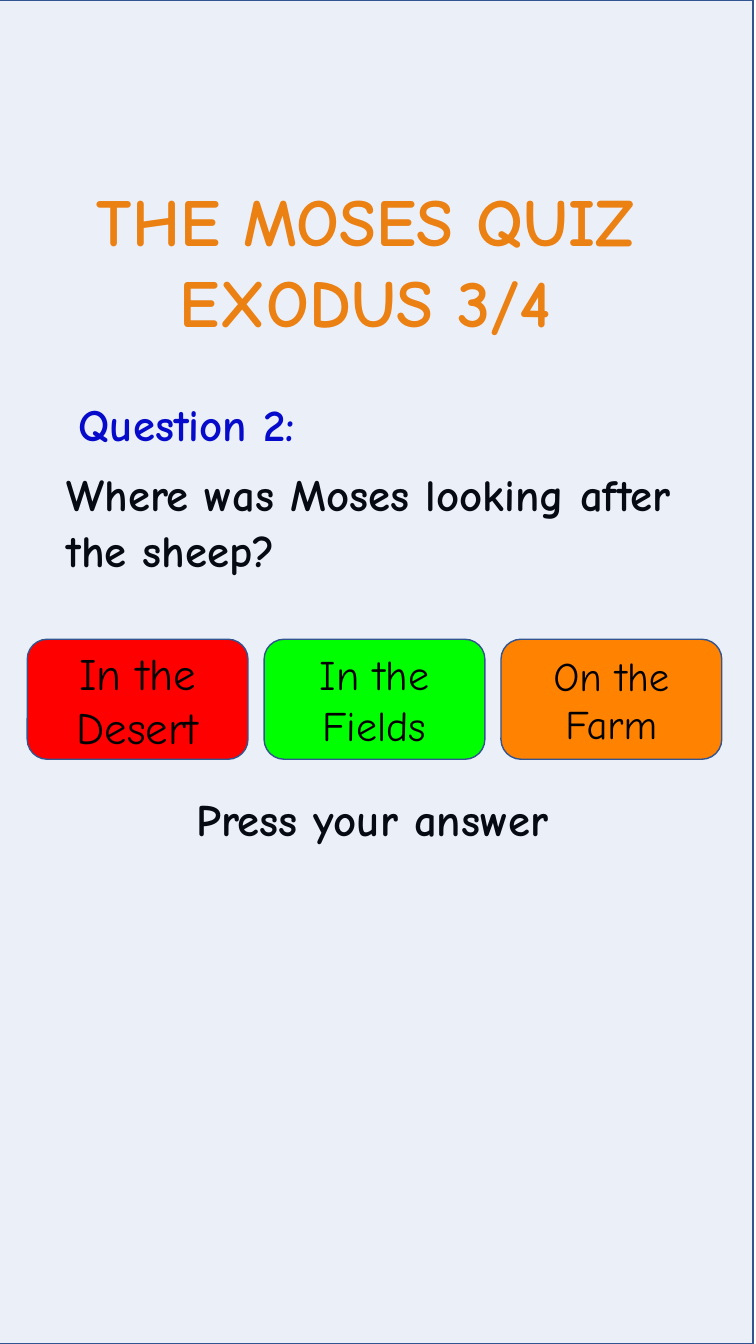
import pptx
import pptx.util
import pptx.dml.color
import pptx.enum.shapes
import pptx.enum.text
import pptx.oxml
import pptx.oxml.ns

Inches, Pt = pptx.util.Inches, pptx.util.Pt
RGB = pptx.dml.color.RGBColor
SHAPE = pptx.enum.shapes.MSO_SHAPE
ALIGN = pptx.enum.text.PP_ALIGN
ANCHOR = pptx.enum.text.MSO_ANCHOR
FIT = pptx.enum.text.MSO_AUTO_SIZE

ORANGE = RGB(0xFF, 0x82, 0x00)
BLUE = RGB(0x00, 0x00, 0xCC)
BLACK = RGB(0x00, 0x00, 0x00)
RED = RGB(0xFF, 0x00, 0x00)
GREEN = RGB(0x00, 0xFF, 0x00)
TINT = RGB(0x44, 0x72, 0xC4)
EDGE = RGB(0x32, 0x54, 0x91)

WIDTH, HEIGHT = 7.5, 13.33
FONT = "Comic Neue"
TITLE = ["THE MOSES QUIZ ", "EXODUS 3/4 "]
LABEL = ["Question 2:"]
QUERY = ["Where was Moses looking after the sheep?"]
PROMPT = ["Press your answer"]
ANSWERS = [
    ("In the Desert", RED, 32),
    ("In the Fields", GREEN, 30),
    ("On the Farm", ORANGE, 29),
]
LEFT, TOP, STEP = 0.27, 6.34, 2.35
WIDE, TALL = 2.19, 1.19


def assign(item, values):
    for name, value in values.items():
        setattr(item, name, value)


def place(shape, box):
    names = ("left", "top", "width", "height")
    assign(shape, dict(zip(names, map(Inches, box))))


def write(shape, lines, size, color, bold=True, wrap=True,
          anchor=ANCHOR.TOP, **para):
    frame = shape.text_frame
    assign(frame, {"text": "\n".join(lines), "word_wrap": wrap,
                   "auto_size": FIT.NONE, "vertical_anchor": anchor})
    for item in frame.paragraphs:
        assign(item, para)
        for run in item.runs:
            assign(run.font, {"name": FONT, "size": Pt(size), "bold": bold})
            run.font.color.rgb = color


def block(slide, kind, box, color):
    shape = slide.shapes.add_shape(kind, *map(Inches, box))
    shape.shadow.inherit = False
    shape.fill.solid()
    shape.fill.fore_color.rgb = color
    shape.line.color.rgb = EDGE
    shape.line.width = Pt(1)
    return shape


def main():
    deck = pptx.Presentation()
    assign(deck, {"slide_width": Inches(WIDTH), "slide_height": Inches(HEIGHT)})
    slide = deck.slides.add_slide(deck.slide_layouts[0])

    title = slide.shapes.title
    place(title, (0.3, 1.73, 6.89, 1.72))
    write(title, TITLE, 48, ORANGE, wrap=False, alignment=ALIGN.CENTER)

    query = slide.placeholders[1]
    place(query, (0.56, 4.56, 6.36, 1.46))
    write(query, QUERY, 32, BLACK, alignment=ALIGN.LEFT,
          line_spacing=Pt(40), space_before=Pt(7.5))

    label = slide.shapes.add_textbox(*map(Inches, (0.47, 3.89, 2.77, 0.64)))
    write(label, LABEL, 32, BLUE, wrap=False, alignment=ALIGN.CENTER)

    prompt = slide.shapes.add_textbox(*map(Inches, (1.85, 7.86, 4.22, 0.72)))
    write(prompt, PROMPT, 32, BLACK, line_spacing=0.9, space_before=Pt(7.5))

    panel = block(slide, SHAPE.RECTANGLE, (-0.03, 0, WIDTH, HEIGHT), TINT)
    tone = panel.fill._xPr.find(".//" + pptx.oxml.ns.qn("a:srgbClr"))
    tone.append(pptx.oxml.parse_xml(
        "<a:alpha %s val='10000'/>" % pptx.oxml.ns.nsdecls("a")))

    for col, (text, color, size) in enumerate(ANSWERS):
        box = (LEFT + col * STEP, TOP, WIDE, TALL)
        button = block(slide, SHAPE.ROUNDED_RECTANGLE, box, color)
        write(button, [text], size, BLACK, bold=False,
              anchor=ANCHOR.MIDDLE, alignment=ALIGN.CENTER)

    deck.save("out.pptx")


if __name__ == "__main__":
    main()
